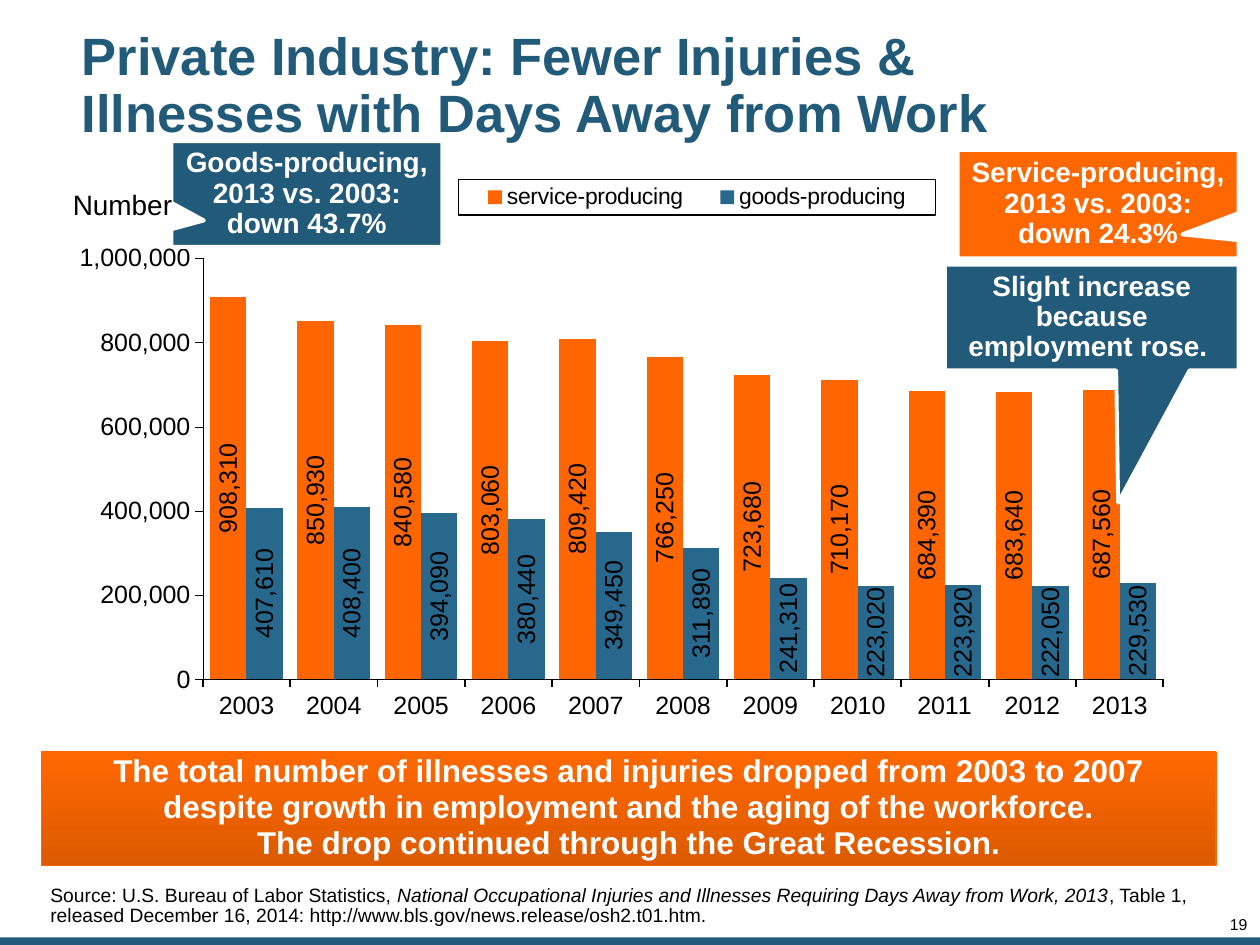
from dataclasses import dataclass

from lxml.etree import SubElement
from pptx import Presentation
from pptx.chart.data import CategoryChartData
from pptx.dml.color import RGBColor
from pptx.enum.chart import XL_CHART_TYPE as ChartType
from pptx.enum.chart import XL_LABEL_POSITION as LabelPosition
from pptx.enum.chart import XL_LEGEND_POSITION as LegendPosition
from pptx.enum.chart import XL_TICK_LABEL_POSITION as TickLabelPosition
from pptx.enum.chart import XL_TICK_MARK as TickMark
from pptx.enum.shapes import MSO_SHAPE as Shape
from pptx.enum.text import MSO_ANCHOR as Anchor
from pptx.enum.text import PP_ALIGN as Align
from pptx.oxml import parse_xml
from pptx.oxml.ns import nsdecls, qn
from pptx.util import Inches, Pt

FONT = "Arial"
NAVY, BLUE = "225A7A", "28688C"
ORANGE, CHART_ORANGE, DARK_ORANGE = "FF6801", "FF6600", "DC5A01"
BLACK, WHITE = "000000", "FFFFFF"


@dataclass
class Box:
    left: float
    top: float
    width: float
    height: float

    def lengths(self):
        return [Inches(v) for v in (self.left, self.top, self.width, self.height)]


@dataclass
class Style:
    size: float
    color: str = BLACK
    bold: bool = False
    align: Align = Align.LEFT
    anchor: Anchor = Anchor.TOP
    spacing: float = 1.0
    margins: tuple = (0.1, 0.05, 0.1, 0.05)


@dataclass
class Callout:
    text: str
    box: Box
    tip: tuple
    color: str


@dataclass
class Series:
    name: str
    color: str
    values: list


CALLOUTS = [
    Callout("Goods-producing, 2013 vs. 2003: down 43.7%",
            Box(1.36, 1.12, 2.15, 0.84), (-0.38, 0.25), NAVY),
    Callout("Service-producing, 2013 vs. 2003: down 24.3%",
            Box(7.6, 1.19, 2.23, 0.86), (0.3, 0.28), ORANGE),
    Callout("Slight increase because employment rose. ",
            Box(7.5, 2.1, 2.33, 0.84), (0.09, 1.75), NAVY),
]
SERIES = [
    Series("service-producing", CHART_ORANGE,
           [908310, 850930, 840580, 803060, 809420, 766250,
            723680, 710170, 684390, 683640, 687560]),
    Series("goods-producing", BLUE,
           [407610, 408400, 394090, 380440, 349450, 311890,
            241310, 223020, 223920, 222050, 229530]),
]


def rgb(color: str) -> RGBColor:
    return RGBColor.from_string(color)


def style_font(font, size: float, color: str = BLACK, bold: bool = False) -> None:
    font.name, font.size, font.bold = FONT, Pt(size), bold
    font.color.rgb = rgb(color)


def write(shape, runs: list, style: Style) -> None:
    """Fill a shape with one paragraph of (text, italic) runs."""
    frame = shape.text_frame
    frame.word_wrap = True
    frame.vertical_anchor = style.anchor
    (frame.margin_left, frame.margin_top,
     frame.margin_right, frame.margin_bottom) = map(Inches, style.margins)
    paragraph = frame.paragraphs[0]
    paragraph.alignment = style.align
    paragraph.line_spacing = style.spacing
    if len(runs) == 1:
        paragraph.text = runs[0][0]
    else:
        for text, italic in runs:
            run = paragraph.add_run()
            run.text = text
            run.font.italic = italic
    for run in paragraph.runs:
        style_font(run.font, style.size, style.color, style.bold)


def add_text(slide, box: Box, runs: list, style: Style) -> None:
    write(slide.shapes.add_textbox(*box.lengths()), runs, style)


def add_block(slide, preset: Shape, box: Box, color: str):
    shape = slide.shapes.add_shape(preset, *box.lengths())
    shape.shadow.inherit = False
    shape.fill.solid()
    shape.fill.fore_color.rgb = rgb(color)
    shape.line.fill.background()
    return shape


def outline(line, color: str, width: float) -> None:
    line.color.rgb = rgb(color)
    line.width = Pt(width)


def add_callout(slide, callout: Callout) -> None:
    shape = add_block(slide, Shape.RECTANGULAR_CALLOUT, callout.box, callout.color)
    shape.adjustments[0], shape.adjustments[1] = callout.tip
    outline(shape.line, WHITE, 2.25)
    write(shape, [(callout.text, False)],
          Style(16, WHITE, True, Align.CENTER, Anchor.MIDDLE, 0.9, (0.1,) * 4))


def add_banner(slide, text: str) -> None:
    shape = add_block(slide, Shape.RECTANGLE, Box(0.33, 5.97, 9.32, 0.9), ORANGE)
    shape.fill.gradient()
    shape.fill.gradient_angle = 270
    for stop, color in zip(shape.fill.gradient_stops, (ORANGE, DARK_ORANGE)):
        stop.color.rgb = rgb(color)
    outline(shape.line, ORANGE, 1)
    write(shape, [(text, False)],
          Style(18, WHITE, True, Align.CENTER, Anchor.MIDDLE, 0.95,
                (0.1, 0.05, 0.1, 0.07)))


def place(element, index: int, box: Box, inner: bool = False) -> None:
    """Give a chart part a manual layout in fractions of the chart."""
    for old in element.findall(qn("c:layout")):
        element.remove(old)
    layout = parse_xml(f"<c:layout {nsdecls('c')}/>")
    manual = SubElement(layout, qn("c:manualLayout"))
    settings = [("layoutTarget", "inner")] if inner else []
    settings += [("xMode", "edge"), ("yMode", "edge"), ("x", box.left),
                 ("y", box.top), ("w", box.width), ("h", box.height)]
    for tag, value in settings:
        SubElement(manual, qn(f"c:{tag}")).set("val", str(value))
    element.insert(index, layout)


def style_axis(axis, line_width: float) -> None:
    axis.has_major_gridlines = False
    axis.major_tick_mark, axis.minor_tick_mark = TickMark.OUTSIDE, TickMark.NONE
    style_font(axis.tick_labels.font, 14.3)
    outline(axis.format.line, BLACK, line_width)


def add_injury_chart(slide) -> None:
    data = CategoryChartData(number_format="#,##0")
    data.categories = [str(year) for year in range(2003, 2014)]
    for series in SERIES:
        data.add_series(series.name, series.values)
    box = Box(0.49, 1.35, 8.75, 4.58)
    chart = slide.shapes.add_chart(
        ChartType.COLUMN_CLUSTERED, *box.lengths(), data).chart
    chart.has_title = False
    style_font(chart.font, 14.3)
    style_axis(chart.category_axis, 1)
    chart.category_axis.tick_label_position = TickLabelPosition.LOW
    axis = chart.value_axis
    style_axis(axis, 0.25)
    axis.minimum_scale, axis.maximum_scale, axis.major_unit = 0, 1000000, 200000
    axis.tick_labels.number_format = "#,##0"
    axis.tick_labels.number_format_is_linked = False

    plot = chart.plots[0]
    plot.gap_width, plot.overlap, plot.vary_by_categories = 40, 0, False
    for bars, series in zip(plot.series, SERIES):
        bars.format.fill.solid()
        bars.format.fill.fore_color.rgb = rgb(series.color)
        labels = bars.data_labels
        labels.show_value, labels.position = True, LabelPosition.CENTER
        labels.number_format, labels.number_format_is_linked = "#,##0", False
        style_font(labels.font, 14.3)
        body = bars.data_labels._element.find(".//" + qn("a:bodyPr"))
        body.set("rot", "-5400000")
        body.set("vert", "horz")

    chart.has_legend = True
    chart.legend.position = LegendPosition.TOP
    chart.legend.include_in_layout = False
    style_font(chart.legend.font, 13.1)
    legend = chart.element.find(".//" + qn("c:legend"))
    place(legend, 1, Box(0.36, 0.016, 0.433, 0.062))
    legend.find(qn("c:txPr")).addprevious(parse_xml(
        f'<c:spPr {nsdecls("c", "a")}><a:ln w="9525"><a:solidFill>'
        f'<a:srgbClr val="{BLACK}"/></a:solidFill></a:ln></c:spPr>'))
    place(chart.element.find(".//" + qn("c:plotArea")), 0,
          Box(0.129, 0.153, 0.872, 0.73), inner=True)


def main() -> None:
    presentation = Presentation()
    presentation.slide_width, presentation.slide_height = Inches(10), Inches(7.5)
    slide = presentation.slides.add_slide(presentation.slide_layouts[6])
    add_block(slide, Shape.RECTANGLE, Box(0, 7.44, 10, 0.06), NAVY)
    add_text(slide, Box(9.41, 7.28, 0.49, 0.13), [("19", False)],
             Style(9, align=Align.RIGHT, spacing=0.85, margins=(0,) * 4))
    add_text(slide, Box(0.6, 0.22, 7.65, 0.94),
             [("Private Industry: Fewer Injuries & Illnesses with Days Away from Work", False)],
             Style(30, NAVY, True, anchor=Anchor.MIDDLE, spacing=0.9, margins=(0.05,) * 4))
    add_injury_chart(slide)
    add_text(slide, Box(0, 7.03, 9.53, 0.47), [
        ("Source: U.S. Bureau of Labor Statistics, ", False),
        ("National Occupational Injuries and Illnesses Requiring Days Away from Work, 2013", True),
        (", Table 1, released December 16, 2014: http://www.bls.gov/news.release/osh2.t01.htm.", False),
    ], Style(11, anchor=Anchor.BOTTOM, spacing=0.85, margins=(0.4, 0, 0, 0.15)))
    add_banner(slide, "The total number of illnesses and injuries dropped from 2003 to 2007 "
                      "despite growth in employment and the aging of the workforce.\v"
                      "The drop continued through the Great Recession.")
    for callout in CALLOUTS[:2]:
        add_callout(slide, callout)
    add_text(slide, Box(0.48, 1.44, 1.33, 0.37), [("Number", False)], Style(16))
    add_callout(slide, CALLOUTS[2])
    presentation.save("out.pptx")


if __name__ == "__main__":
    main()
